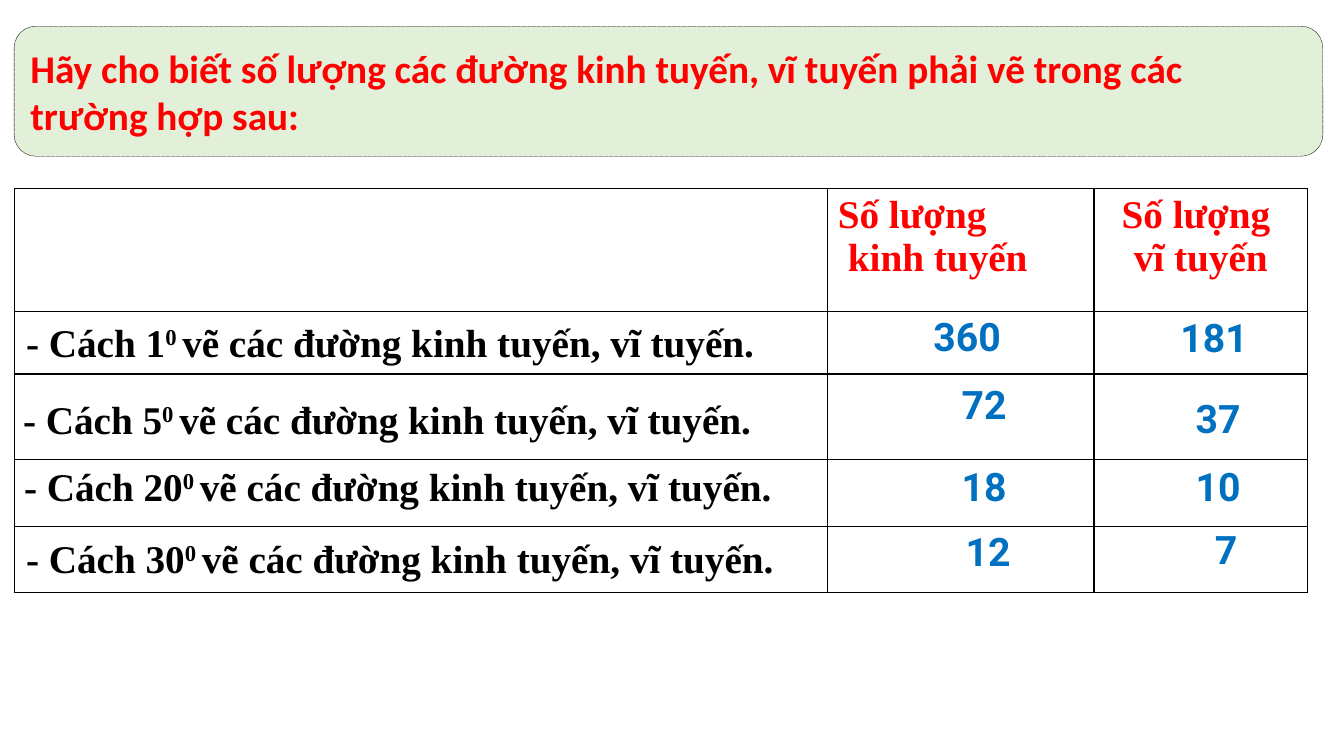
from pptx import Presentation
from pptx.dml.color import RGBColor
from pptx.enum.dml import MSO_LINE
from pptx.enum.shapes import MSO_SHAPE
from pptx.enum.text import MSO_ANCHOR, MSO_AUTO_SIZE, PP_ALIGN
from pptx.oxml import parse_xml
from pptx.oxml.ns import nsdecls
from pptx.util import Inches, Pt

ROUND = MSO_SHAPE.ROUNDED_RECTANGLE
DASH = MSO_LINE.SQUARE_DOT
MIDDLE = MSO_ANCHOR.MIDDLE
GROW = MSO_AUTO_SIZE.SHAPE_TO_FIT_TEXT
LEFT, CENTER, JUSTIFY = PP_ALIGN.LEFT, PP_ALIGN.CENTER, PP_ALIGN.JUSTIFY

COLORS = {"red": "FF0000", "green": "E2F0D9", "blue": "0070C0", "black": "000000"}
SERIF = "Times New Roman"
COLS = [8.07, 2.64, 2.12]
ROWS = [1.22, 0.62, 0.85, 0.66, 0.66]
HEADS = [
    (1, LEFT, ["Số lượng", "kinh tuyến"], 0.1),
    (2, CENTER, ["Số lượng ", "vĩ tuyến"], 0),
]
CASES = [
    ("1", (0.02, 1.17, 8.85), ("360", 9.02, 1.18, 1.25), ("181", 11.47, 1.19, 1.19)),
    ("5", (-0.01, 1.93, 8.71), ("72", 9.3, 1.85, 0.73), ("37", 11.62, 1.99, 0.73)),
    ("20", (0, 2.6, 8.99), ("18", 9.3, 2.67, 0.73), ("10", 11.62, 2.67, 0.73)),
    ("30", (0.02, 3.31, 9.66), ("12", 9.34, 3.31, 0.73), ("7", 11.81, 3.29, 0.73)),
]


def color(name):
    """Return a named colour."""
    return RGBColor.from_string(COLORS[name])


def style(para, face, tint, align=LEFT):
    """Set the bold 28 point font and the alignment of a paragraph."""
    para.alignment = align
    font = para.font
    font.name, font.size, font.bold = face, Pt(28), True
    font.color.rgb = color(tint)


def add_box(slide, left, top, width, height):
    """Add a wrapping text box and return its first paragraph."""
    box = slide.shapes.add_textbox(
        Inches(left), Inches(top), Inches(width), Inches(height))
    frame = box.text_frame
    frame.word_wrap = True
    frame.auto_size = GROW
    return frame.paragraphs[0]


def add_title(slide, left, top, width, height):
    """Draw the question in its rounded panel."""
    panel = slide.shapes.add_shape(
        ROUND, Inches(left), Inches(top), Inches(width), Inches(height))
    panel.shadow.inherit = False
    panel.fill.solid()
    panel.fill.fore_color.rgb = color("green")
    panel.line.color.rgb = color("black")
    panel.line.width = Pt(0.25)
    panel.line.dash_style = DASH
    frame = panel.text_frame
    frame.word_wrap = True
    frame.vertical_anchor = MIDDLE
    para = frame.paragraphs[0]
    para.text = ("Hãy cho biết số lượng các đường kinh tuyến, vĩ tuyến "
                 "phải vẽ trong các trường hợp sau:")
    style(para, "Calibri", "red")


def add_edges(cell):
    """Give a cell no fill and thin black borders."""
    cell.fill.background()
    props = cell._tc.get_or_add_tcPr()
    for spot, side in enumerate(("lnL", "lnR", "lnT", "lnB")):
        props.insert(spot, parse_xml(
            f'<a:{side} {nsdecls("a")} w="{Pt(1)}"><a:solidFill>'
            f'<a:srgbClr val="{COLORS["black"]}"/></a:solidFill></a:{side}>'))


def add_grid(slide, left, top):
    """Draw the table with its two column heads."""
    table = slide.shapes.add_table(
        len(ROWS), len(COLS), Inches(left), Inches(top),
        Inches(sum(COLS)), Inches(sum(ROWS))).table
    for col, width in zip(table.columns, COLS):
        col.width = Inches(width)
    for row, height in zip(table.rows, ROWS):
        row.height = Inches(height)
    for cell in table.iter_cells():
        add_edges(cell)
    for col, align, lines, indent in HEADS:
        frame = table.cell(0, col).text_frame
        frame.text = "\n".join(lines)
        for para in frame.paragraphs:
            style(para, SERIF, "red", align)
        frame.paragraphs[1]._p.get_or_add_pPr().set("marL", str(Inches(indent)))


def add_cases(slide, left, top):
    """Place each case and its two counts over the table rows."""
    for step, (dx, dy, width), *counts in CASES:
        para = add_box(slide, left + dx, top + dy, width, 0.6)
        para.line_spacing = 1.15
        for text in (f"- Cách {step}", "0 ", "vẽ các đường kinh tuyến, vĩ tuyến."):
            para.add_run().text = text
        para.runs[1]._r.get_or_add_rPr().set("baseline", "30000")
        style(para, SERIF, "black", JUSTIFY)
        for count, dx, dy, width in counts:
            para = add_box(slide, left + dx, top + dy, width, 0.57)
            para.text = count
            style(para, "Roboto", "blue")


def main():
    """Build and save the slide."""
    deck = Presentation()
    deck.slide_width, deck.slide_height = Inches(13.33), Inches(7.5)
    slide = deck.slides.add_slide(deck.slide_layouts[6])
    add_title(slide, 0.14, 0.26, 12.98, 1.29)
    add_grid(slide, 0.14, 1.87)
    add_cases(slide, 0.14, 1.87)
    deck.save("out.pptx")


if __name__ == "__main__":
    main()
